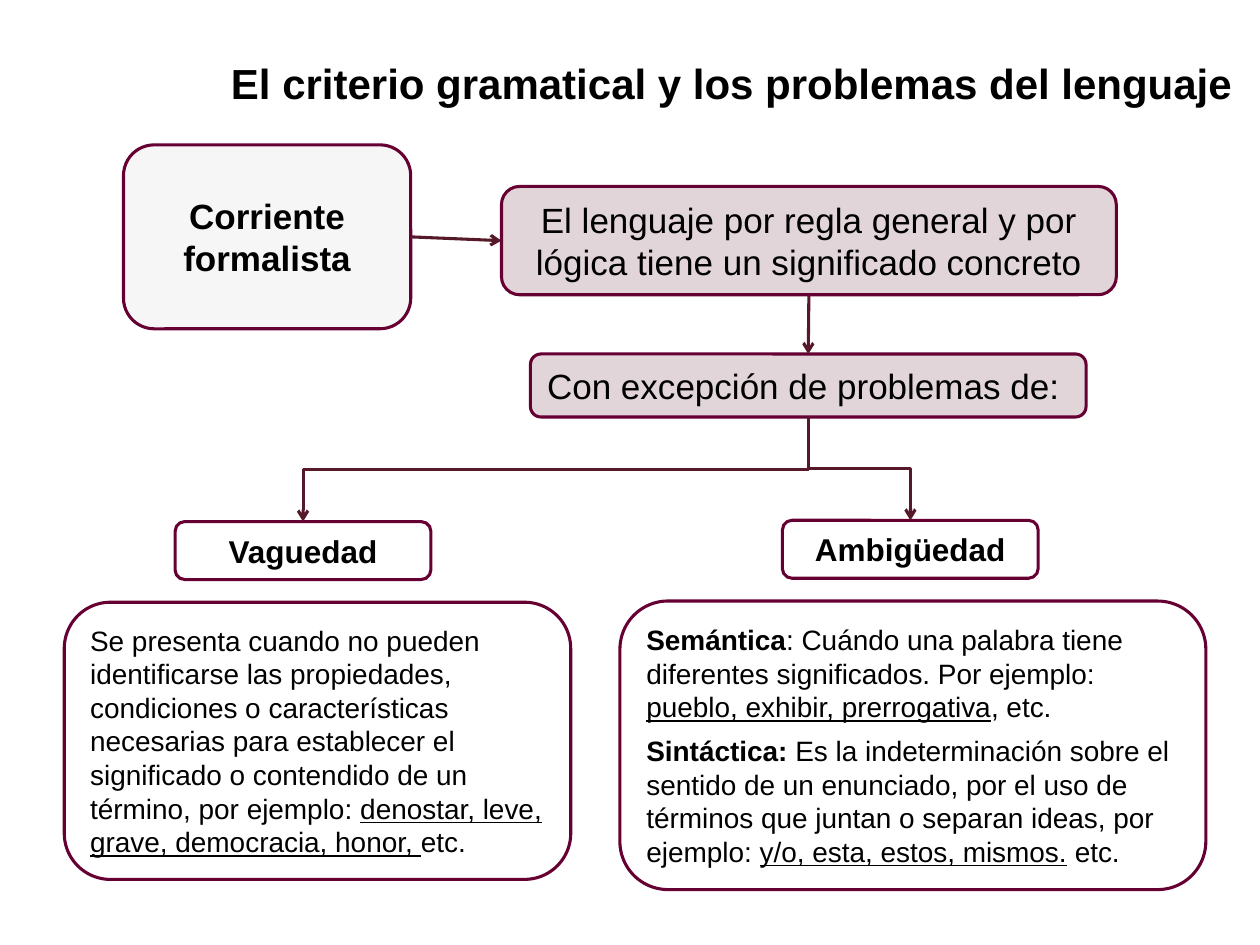
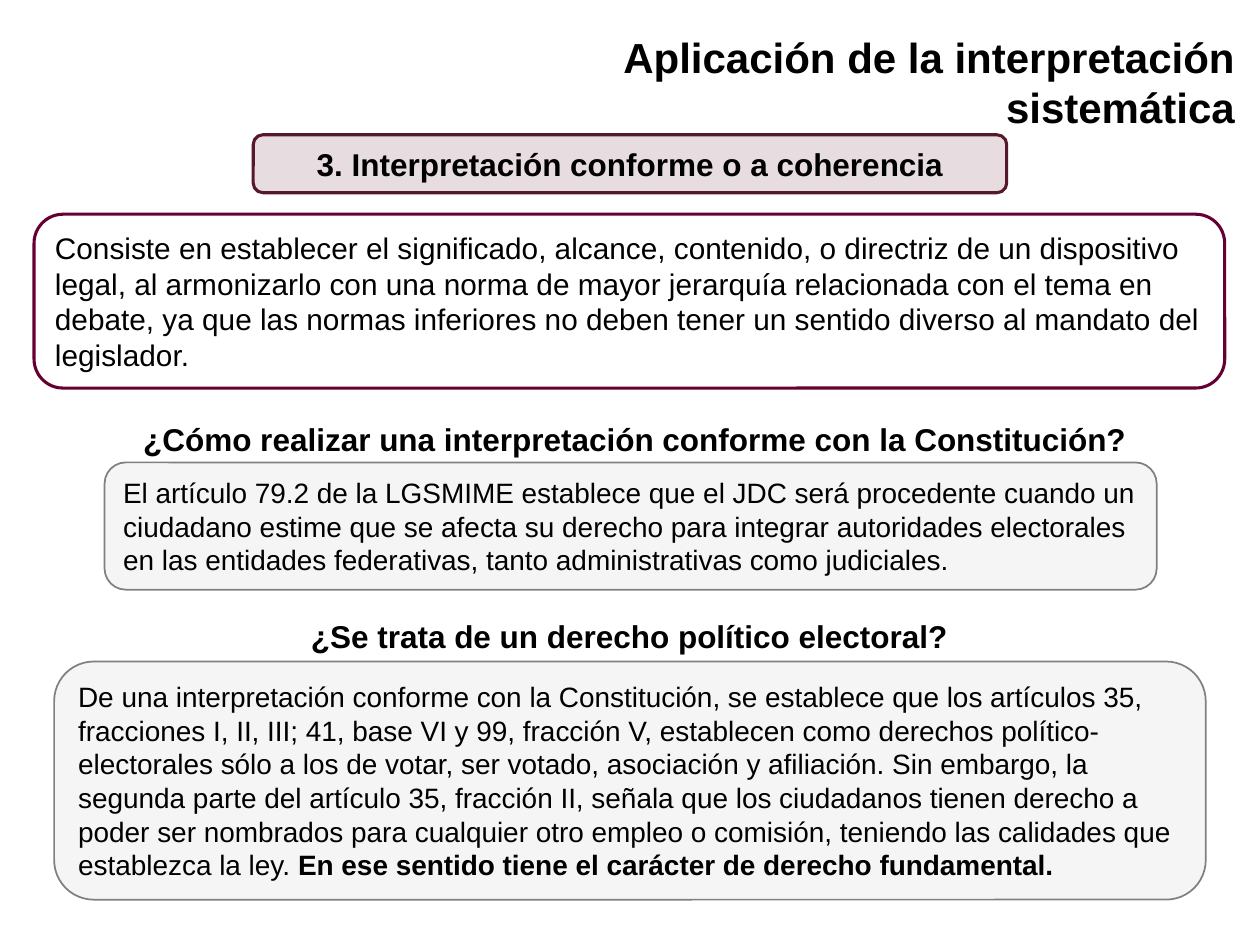
"""Builds two slides on legal interpretation: language problems and the coherence criterion."""
from dataclasses import dataclass

from lxml import etree
from pptx import Presentation
from pptx.dml.color import RGBColor
from pptx.enum.shapes import MSO_CONNECTOR, MSO_SHAPE
from pptx.enum.text import MSO_ANCHOR, MSO_AUTO_SIZE, PP_ALIGN
from pptx.oxml.ns import qn
from pptx.util import Inches, Pt

STRAIGHT, ELBOW = MSO_CONNECTOR.STRAIGHT, MSO_CONNECTOR.ELBOW
ROUNDED = MSO_SHAPE.ROUNDED_RECTANGLE
MIDDLE, NO_FIT = MSO_ANCHOR.MIDDLE, MSO_AUTO_SIZE.NONE
LEFT, CENTER, RIGHT = PP_ALIGN.LEFT, PP_ALIGN.CENTER, PP_ALIGN.RIGHT
TOP_SIDE, BOTTOM_SIDE, LEFT_SIDE, RIGHT_SIDE = 0, 2, 1, 3

SLIDE_W, SLIDE_H = Inches(10), Inches(7.5)
CELL = SLIDE_W / 100


@dataclass(frozen=True)
class Theme:
    """Fonts, colours and type sizes."""
    font: str = "Arial"
    text: str = "000000"
    plum: str = "660033"
    wine: str = "551929"
    gray: str = "808080"
    title: int = 24
    concept: int = 20
    heading: int = 18
    lead: int = 17
    body: int = 16
    gap: int = 6
    line: float = 1.75
    thin: float = 1


THEME = Theme()

# style: (fill, opacity %), line colour, line width, type size, bold, alignment
STYLES = {
    "origin": (("F2F2F2", 63), THEME.plum, THEME.line, THEME.concept, True, CENTER),
    "concept": (("D1BDC3", 63), THEME.plum, THEME.line, THEME.concept, False, CENTER),
    "problem": (None, THEME.plum, THEME.line, THEME.heading, True, CENTER),
    "detail": (None, THEME.plum, THEME.line, THEME.body, False, LEFT),
    "section": (("D1BDC3", 50), THEME.wine, THEME.line, THEME.heading, True, CENTER),
    "definition": (None, THEME.plum, THEME.line, THEME.lead, False, LEFT),
    "question": (None, None, 0, THEME.heading, True, CENTER),
    "answer": (("D9D9D9", 25), THEME.gray, THEME.thin, THEME.body, False, LEFT),
}

# box: name, style, (column, row, columns, rows), paragraphs of (text, marks)
SLIDES = [
    {
        "title": ("El criterio gramatical y los problemas del lenguaje", (16.9, 4.1, 81.9, 5)),
        "boxes": [
            ("formalismo", "origin", (9.8, 11.5, 22.8, 14.6), [[("Corriente formalista", "")]]),
            ("regla", "concept", (39.8, 14.8, 48.8, 8.6), [
                [("El lenguaje por regla general y por lógica tiene un significado concreto", "")]]),
            ("excepción", "concept", (42.1, 28.1, 44.1, 5), [
                [("Con excepción de problemas de: ", "")]]),
            ("ambigüedad", "problem", (62.1, 41.3, 20.3, 4.6), [[("Ambigüedad", "")]]),
            ("vaguedad", "problem", (13.9, 41.4, 20.3, 4.6), [[("Vaguedad", "")]]),
            ("tipos", "detail", (49.2, 47.7, 46.5, 22.9), [
                [("Semántica", "b"),
                 (": Cuándo una palabra tiene diferentes significados. Por ejemplo: ", ""),
                 ("pueblo, exhibir, prerrogativa", "u"), (", etc.", "")],
                [("Sintáctica:", "b"),
                 (" Es la indeterminación sobre el sentido de un enunciado, por el uso de "
                  "términos que juntan o separan ideas, por ejemplo: ", ""),
                 ("y/o, esta, estos, mismos.", "u"), (" etc.", "")]]),
            ("imprecisión", "detail", (5.1, 47.8, 40.2, 22), [
                [("Se presenta cuando no pueden identificarse las propiedades, condiciones o "
                  "características necesarias para establecer el significado o contendido de "
                  "un término, por ejemplo: ", ""),
                 ("denostar, leve, grave, democracia, honor, ", "u"), ("etc.", "")]]),
        ],
        "arrows": [("formalismo", RIGHT_SIDE, "regla", LEFT_SIDE),
                   ("regla", BOTTOM_SIDE, "excepción", TOP_SIDE)],
        "branches": [("excepción", "vaguedad"), ("excepción", "ambigüedad")],
    },
    {
        "title": ("Aplicación de la interpretación sistemática", (29.4, 4, 69.6, 5)),
        "boxes": [
            ("criterio", "section", (20.1, 10.7, 59.8, 4.6), [
                [("3. Interpretación conforme o a coherencia", "")]]),
            ("definición", "definition", (2.7, 17, 94.5, 13.8), [
                [("Consiste en establecer el significado, alcance, contenido, o directriz de un "
                  "dispositivo legal, al armonizarlo con una norma de mayor jerarquía relacionada "
                  "con el tema en debate, ya que las normas inferiores no deben tener un sentido "
                  "diverso al mandato del legislador.", "")]]),
            ("cómo", "question", (5.1, 32.8, 90.6, 4), [
                [("¿Cómo realizar una interpretación conforme con la Constitución?", "")]]),
            ("artículo", "answer", (8.3, 36.7, 83.5, 10.1), [
                [("El artículo 79.2 de la LGSMIME establece que el JDC será procedente cuando un "
                  "ciudadano estime que se afecta su derecho para integrar autoridades electorales "
                  "en las entidades federativas, tanto administrativas como judiciales.", "")]]),
            ("derecho", "question", (18.4, 48.5, 63.1, 4), [
                [("¿Se trata de un derecho político electoral?", "")]]),
            ("conclusión", "answer", (4.3, 52.5, 91.4, 18.9), [
                [("De una interpretación conforme con la Constitución, se establece que los "
                  "artículos 35, fracciones I, II, III; 41, base VI y 99, fracción V, establecen "
                  "como derechos político-electorales sólo a los de votar, ser votado, asociación "
                  "y afiliación. Sin embargo, la segunda parte del artículo 35, fracción II, "
                  "señala que los ciudadanos tienen derecho a poder ser nombrados para cualquier "
                  "otro empleo o comisión, teniendo las calidades que establezca la ley. ", ""),
                 ("En ese sentido tiene el carácter de derecho fundamental.", "b")]]),
        ],
        "arrows": [],
        "branches": [],
    },
]


def cells(box):
    """Turn grid cells into slide lengths."""
    return [round(n * CELL) for n in box]


def set_font(p, size, bold, align):
    """Format a whole paragraph."""
    p.alignment = align
    p.font.name, p.font.size, p.font.bold = THEME.font, Pt(size), bold
    p.font.color.rgb = RGBColor.from_string(THEME.text)


def add_title(s, text, box):
    """Place the title flush right."""
    sp = s.shapes.title
    sp.left, sp.top, sp.width, sp.height = cells(box)
    tf = sp.text_frame
    tf.text = text
    tf.auto_size, tf.vertical_anchor, tf.word_wrap = NO_FIT, MIDDLE, False
    set_font(tf.paragraphs[0], THEME.title, True, RIGHT)


def set_fill(sp, fill):
    """Give a shape a translucent fill, or none."""
    if not fill:
        sp.fill.background()
        return
    color, opacity = fill
    sp.fill.solid()
    sp.fill.fore_color.rgb = RGBColor.from_string(color)
    clr = sp.element.spPr.find(qn("a:solidFill"))[0]
    etree.SubElement(clr, qn("a:alpha")).set("val", str(opacity * 1000))


def add_box(s, style, box, paragraphs):
    """Add a text box or a rounded panel with its text."""
    fill, line, width, size, bold, align = STYLES[style]
    if line:
        sp = s.shapes.add_shape(ROUNDED, *cells(box))
        sp.shadow.inherit = False
        set_fill(sp, fill)
        sp.line.color.rgb = RGBColor.from_string(line)
        sp.line.width = Pt(width)
    else:
        sp = s.shapes.add_textbox(*cells(box))
    tf = sp.text_frame
    tf.word_wrap, tf.vertical_anchor = True, MIDDLE
    for i, runs in enumerate(paragraphs):
        p = tf.add_paragraph() if i else tf.paragraphs[0]
        set_font(p, size, bold, align)
        if i:
            p.space_before = Pt(THEME.gap)
        for text, marks in runs:
            r = p.add_run()
            r.text = text
            if "b" in marks:
                r.font.bold = True
            if "u" in marks:
                r.font.underline = True
    return sp


def style_arrow(c):
    """Colour a connector and give it an open arrowhead."""
    c.line.color.rgb = RGBColor.from_string(THEME.wine)
    c.line.width = Pt(THEME.line)
    etree.SubElement(c.line._get_or_add_ln(), qn("a:tailEnd")).set("type", "arrow")
    etree.SubElement(c.element.spPr, qn("a:effectLst"))


def add_arrow(s, start, start_side, end, end_side):
    """Join two boxes with a straight arrow."""
    c = s.shapes.add_connector(STRAIGHT, 0, 0, 0, 0)
    c.begin_connect(start, start_side)
    c.end_connect(end, end_side)
    style_arrow(c)


def add_branch(s, start, end):
    """Drop an elbow arrow from the bottom of one box to the top of another."""
    x1, y1 = start.left + start.width // 2, start.top + start.height
    x2, y2 = end.left + end.width // 2, end.top
    cx, cy = (x1 + x2) // 2, (y1 + y2) // 2
    drop, reach = (y2 - y1) // 2, abs(x2 - x1) // 2
    turn = 1 if x2 < x1 else -1
    c = s.shapes.add_connector(ELBOW, cx - turn * drop, cy - reach, cx + turn * drop, cy + reach)
    c.rotation = 90 * turn % 360
    style_arrow(c)


def main():
    """Build and save the slides."""
    prs = Presentation()
    prs.slide_width, prs.slide_height = SLIDE_W, SLIDE_H
    for content in SLIDES:
        s = prs.slides.add_slide(prs.slide_layouts[5])
        add_title(s, *content["title"])
        boxes = {name: add_box(s, *rest) for name, *rest in content["boxes"]}
        for start, start_side, end, end_side in content["arrows"]:
            add_arrow(s, boxes[start], start_side, boxes[end], end_side)
        for start, end in content["branches"]:
            add_branch(s, boxes[start], boxes[end])
    prs.save("out.pptx")


if __name__ == "__main__":
    main()
